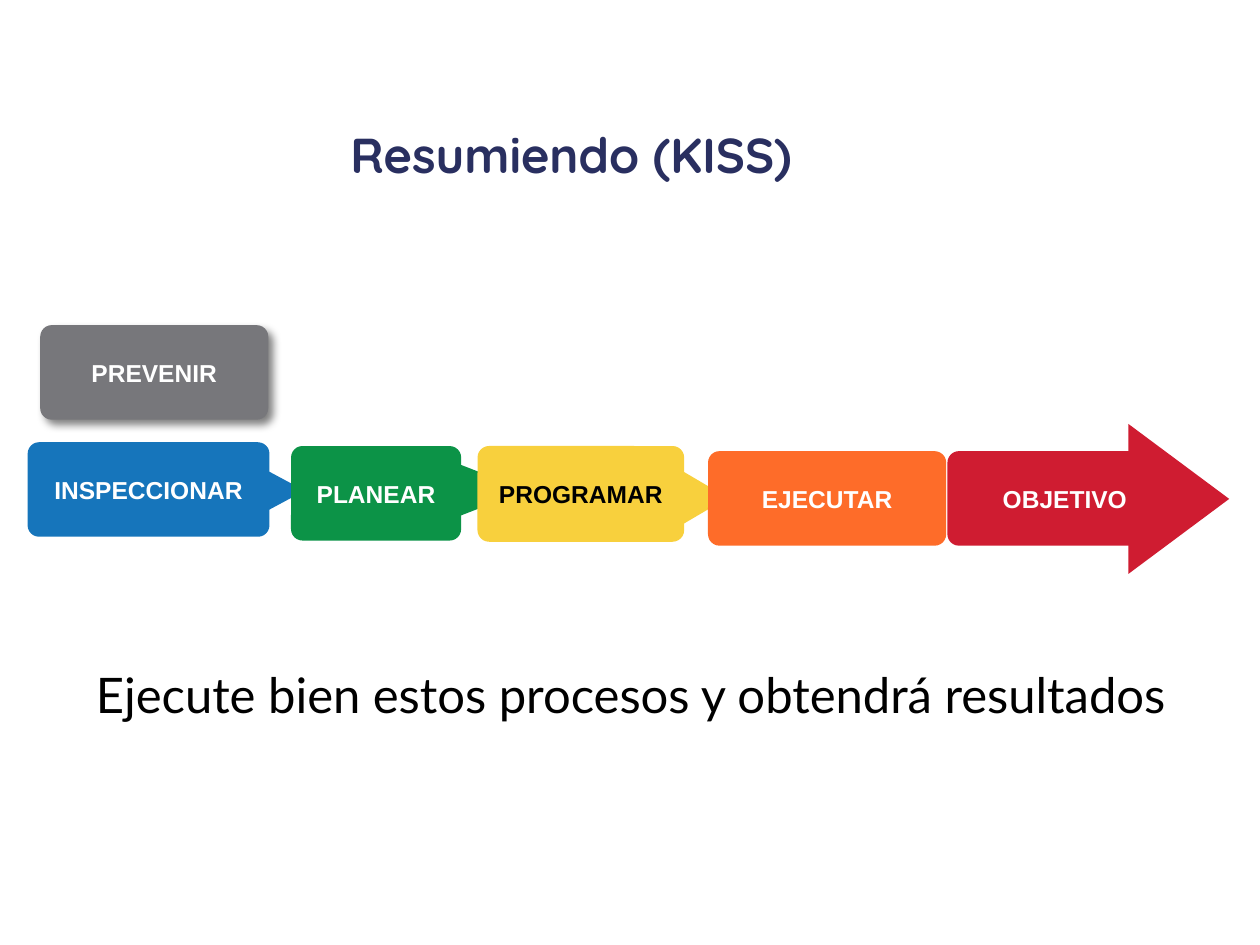
import pptx
import pptx.util
import pptx.dml.color
import pptx.enum.shapes
import pptx.enum.text
import pptx.oxml
import pptx.oxml.ns

Pt = pptx.util.Pt
RGB = pptx.dml.color.RGBColor
SHAPE = pptx.enum.shapes.MSO_SHAPE
ALIGN = pptx.enum.text.PP_ALIGN
ANCHOR = pptx.enum.text.MSO_ANCHOR

NAVY = RGB(0x29, 0x2F, 0x60)
BLUE = RGB(0x16, 0x75, 0xBB)
GREEN = RGB(0x0C, 0x93, 0x47)
YELLOW = RGB(0xF8, 0xD0, 0x3D)
ORANGE = RGB(0xFE, 0x6C, 0x29)
RED = RGB(0xCF, 0x1C, 0x31)
GRAY = RGB(0x77, 0x77, 0x7B)
WHITE = RGB(0xFF, 0xFF, 0xFF)
BLACK = RGB(0, 0, 0)

LABEL = {"name": "Arial", "size": Pt(14), "bold": True}
TITLE = {"name": "Quicksand", "size": Pt(28), "bold": True}
CLOSING = {"name": "Lato", "size": Pt(28), "bold": False}

# Label, box, fill, ink, extra left inset,
# tip (start from the box's right edge, length, breadth, drop from its middle)
STEPS = [
    ("INSPECCIONAR", (15.8, 252.7, 138.2, 54), BLUE, WHITE, 0,
     (-19.5, 39.6, 42.5, 0.7)),
    ("PLANEAR", (166.3, 254.9, 97.2, 54), GREEN, WHITE, 0,
     (-17.6, 54.7, 42.5, -1.8)),
    ("PROGRAMAR", (272.9, 254.9, 118.1, 54.7), YELLOW, BLACK, 0,
     (-11.8, 36.7, 43.2, 2.2)),
    ("EJECUTAR", (404.6, 257.8, 136.1, 54), ORANGE, WHITE, 0, None),
    ("OBJETIVO", (541.4, 257.8, 123.1, 54), RED, WHITE, 11,
     (-19.7, 57.6, 85.7, 0.3)),
]

SHADOW = (
    '<a:effectLst %s><a:outerShdw blurRad="%d" dist="%d" dir="2700000" '
    'algn="tl" rotWithShape="0"><a:srgbClr val="000000">'
    '<a:alpha val="50000"/></a:srgbClr></a:outerShdw></a:effectLst>'
    % (pptx.oxml.ns.nsdecls("a"), Pt(5), Pt(4))
)


def write(frame, text, style, ink, align, anchor, spacing=1.0):
    frame.word_wrap = True
    frame.vertical_anchor = anchor
    para = frame.paragraphs[0]
    para.alignment = align
    para.line_spacing = spacing
    para.space_before = Pt(0)
    run = para.add_run()
    run.text = text
    for key, value in style.items():
        setattr(run.font, key, value)
    run.font.color.rgb = ink


def add_solid(shapes, kind, box, fill):
    shape = shapes.add_shape(kind, *map(Pt, box))
    shape.shadow.inherit = False
    shape.fill.solid()
    shape.fill.fore_color.rgb = fill
    shape.line.fill.background()
    return shape


def add_tip(shapes, box, fill, tip):
    """Point a triangle right, out of the right edge of the box."""
    left, top, width, height = box
    start, length, breadth, drop = tip
    mid_x = left + width + start + length / 2
    mid_y = top + height / 2 + drop
    place = (mid_x - breadth / 2, mid_y - length / 2, breadth, length)
    add_solid(shapes, SHAPE.ISOSCELES_TRIANGLE, place, fill).rotation = 90


def add_card(shapes, box, label, fill, ink, inset=0):
    card = add_solid(shapes, SHAPE.ROUNDED_RECTANGLE, box, fill)
    card.adjustments[0] = 0.121
    card.text_frame.margin_left = Pt(7.2 + inset)
    write(card.text_frame, label, LABEL, ink, ALIGN.CENTER, ANCHOR.MIDDLE)
    return card


def add_step(slide, label, box, fill, ink, inset, tip):
    group = slide.shapes.add_group_shape()
    if tip:
        add_tip(group.shapes, box, fill, tip)
    add_card(group.shapes, box, label, fill, ink, inset)


def add_prevent(slide, box):
    card = add_card(slide.shapes, box, "PREVENIR", GRAY, WHITE)
    props = card._element.spPr
    props.remove(props.find(pptx.oxml.ns.qn("a:effectLst")))
    props.append(pptx.oxml.parse_xml(SHADOW))


def set_title(slide, box):
    title = slide.shapes.title
    title.left, title.top, title.width, title.height = map(Pt, box)
    write(title.text_frame, "Resumiendo (KISS)", TITLE, NAVY,
          ALIGN.LEFT, ANCHOR.MIDDLE, 0.9)


def add_closing(slide, box):
    frame = slide.shapes.add_textbox(*map(Pt, box)).text_frame
    write(frame, "Ejecute bien estos procesos y obtendrá resultados",
          CLOSING, BLACK, ALIGN.CENTER, ANCHOR.TOP, 0.9)


def main():
    deck = pptx.Presentation()
    deck.slide_width, deck.slide_height = Pt(720), Pt(540)
    slide = deck.slides.add_slide(deck.slide_layouts[5])
    set_title(slide, (193, 51.8, 537.1, 76.3))
    for step in STEPS:
        add_step(slide, *step)
    add_prevent(slide, (23, 185.8, 130.3, 54))
    add_closing(slide, (45.4, 380.2, 630, 44.6))
    deck.save("out.pptx")


if __name__ == "__main__":
    main()
